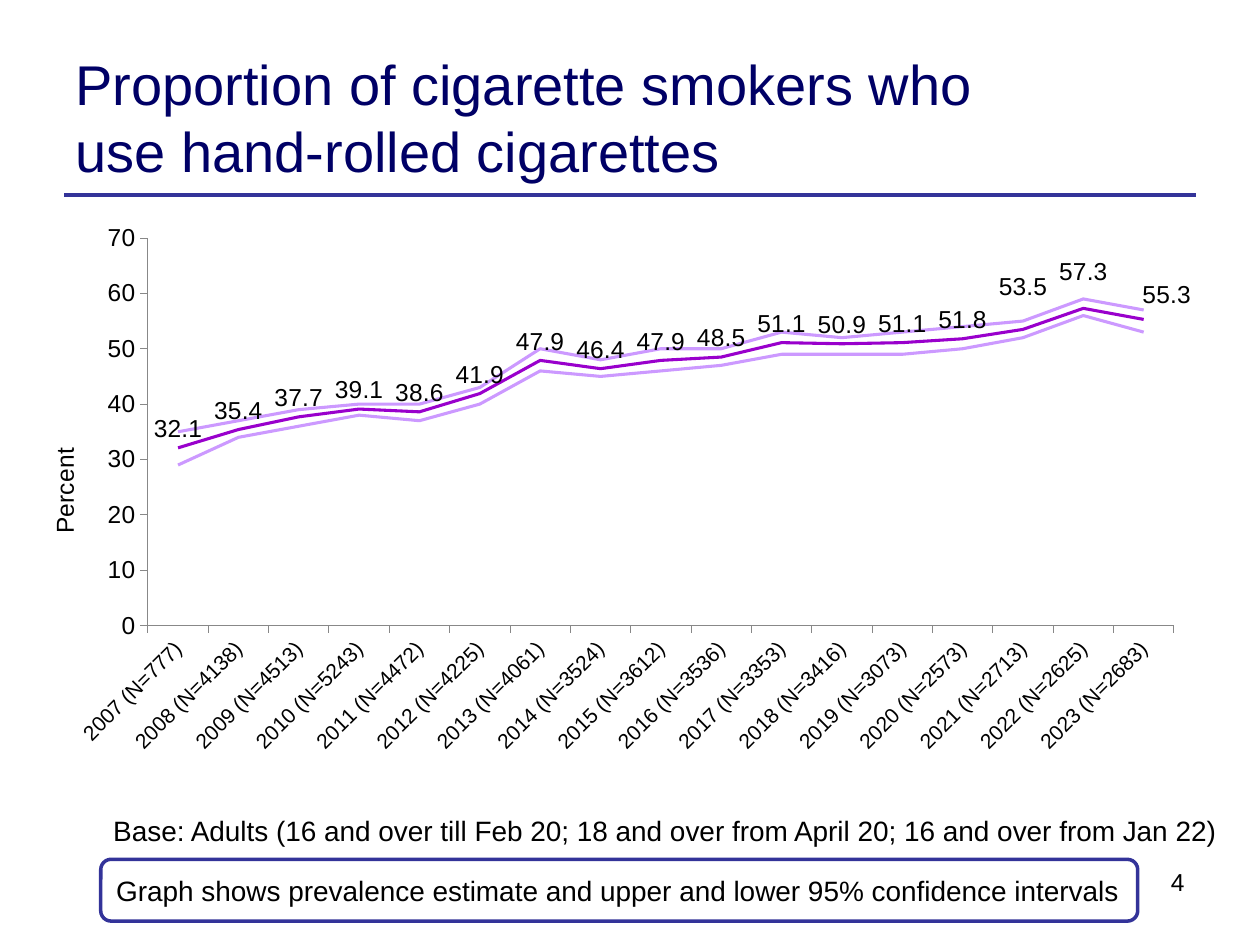
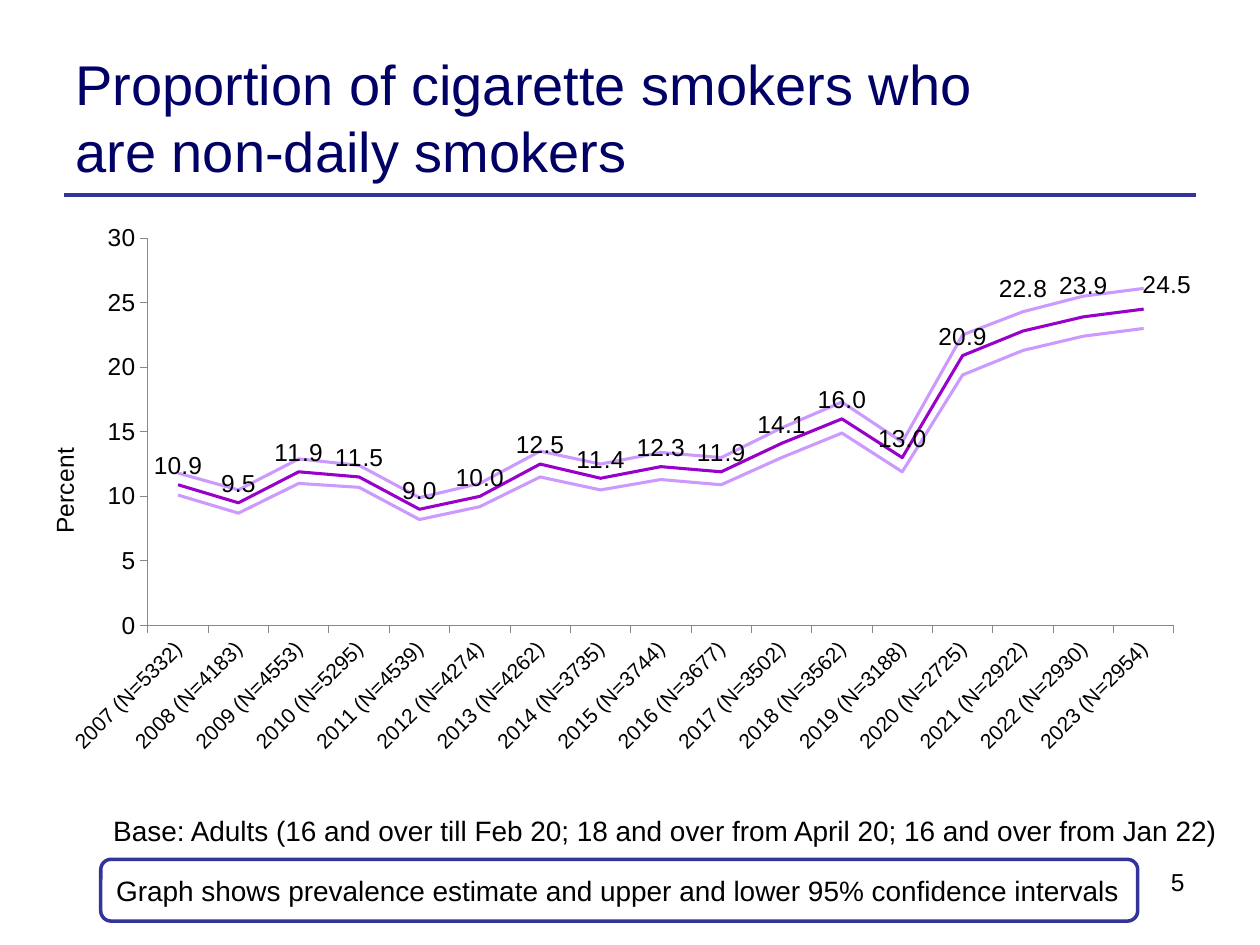
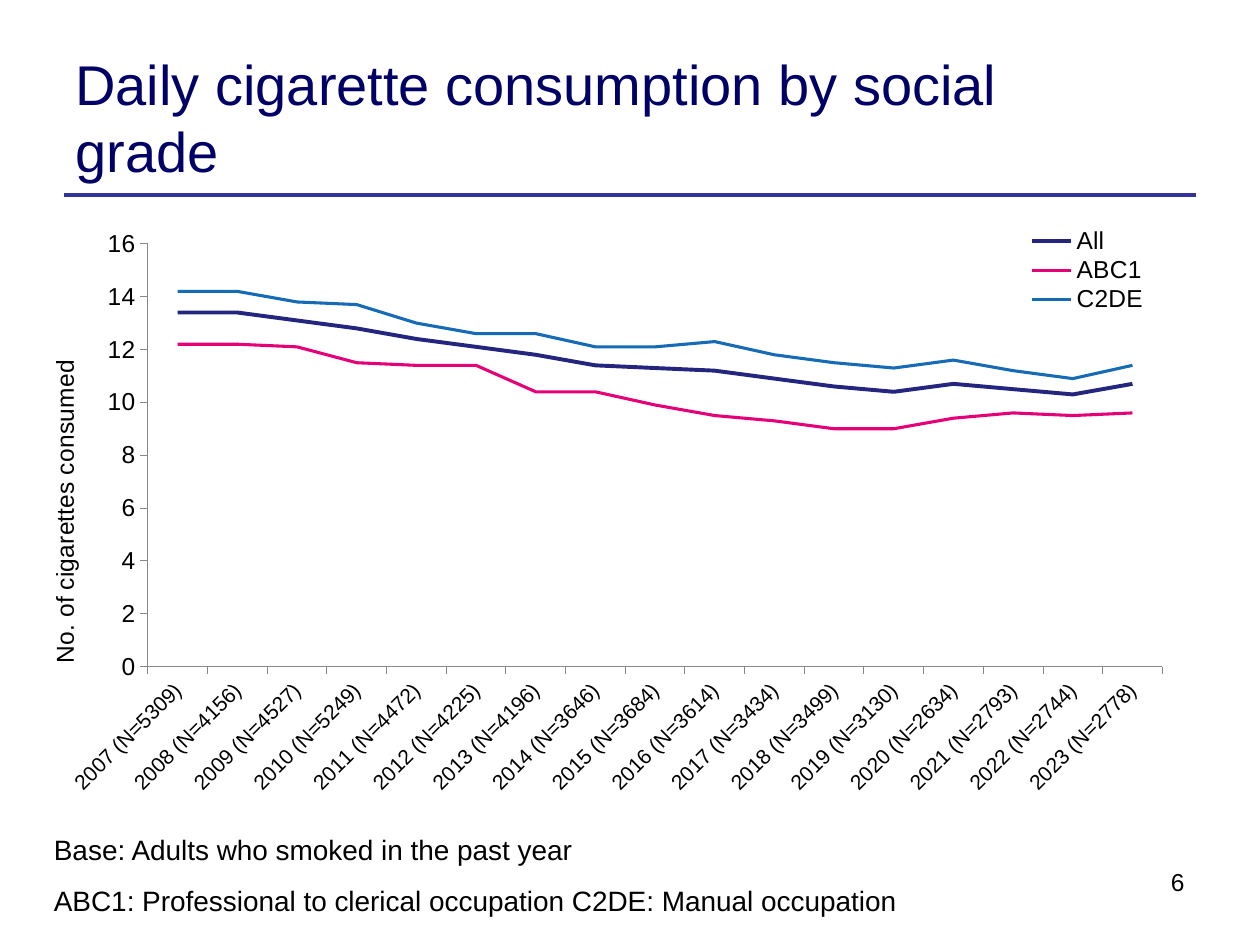
from lxml import etree
from pptx import Presentation
from pptx.chart.data import CategoryChartData
from pptx.dml.color import RGBColor
from pptx.enum.chart import XL_CHART_TYPE, XL_LABEL_POSITION, XL_LEGEND_POSITION, XL_TICK_MARK
from pptx.enum.shapes import MSO_CONNECTOR, MSO_SHAPE
from pptx.enum.text import MSO_ANCHOR, PP_ALIGN
from pptx.oxml.ns import qn
from pptx.util import Inches, Pt

FONT = "Arial"
COLORS = {
    "title": "000066", "rule": "333399", "text": "000000", "white": "FFFFFF",
    "axis": "888888", "estimate": "9900CC", "interval": "CC99FF",
    "all": "24257E", "abc1": "E50078", "c2de": "156BB5",
}
BASE_NOTE = "Base: Adults (16 and over till Feb 20; 18 and over from April 20; 16 and over from Jan 22)"
INTERVAL_NOTE = "Graph shows prevalence estimate and upper and lower 95% confidence intervals"
FIRST_YEAR = 2007

# Each series: name, colour key, line width in points, values from 2007 on.
# Label shifts: point index -> offset as a fraction of the chart size.
ROLLED = {
    "sizes": [777, 4138, 4513, 5243, 4472, 4225, 4061, 3524, 3612, 3536, 3353, 3416, 3073,
              2573, 2713, 2625, 2683],
    "series": [
        ("Series 1", "estimate", 1.75, [32.1, 35.4, 37.7, 39.1, 38.6, 41.9, 47.9, 46.4, 47.9,
                                        48.5, 51.1, 50.9, 51.1, 51.8, 53.5, 57.3, 55.3]),
        ("Series 2", "interval", 1.75, [29, 34, 36, 38, 37, 40, 46, 45, 46,
                                        47, 49, 49, 49, 50, 52, 56, 53]),
        ("Series 3", "interval", 1.75, [35, 37, 39, 40, 40, 43, 50, 48, 50,
                                        50, 53, 52, 53, 54, 55, 59, 57]),
    ],
    "top": 70, "step": 10,
    "label_shifts": {14: (0, -0.04), 15: (0, -0.03), 16: (0.02, -0.01)},
}
NON_DAILY = {
    "sizes": [5332, 4183, 4553, 5295, 4539, 4274, 4262, 3735, 3744, 3677, 3502, 3562, 3188,
              2725, 2922, 2930, 2954],
    "series": [
        ("Series 1", "estimate", 1.75, [10.9, 9.5, 11.9, 11.5, 9, 10, 12.5, 11.4, 12.3,
                                        11.9, 14.1, 16, 13, 20.9, 22.8, 23.9, 24.5]),
        ("Series 2", "interval", 1.75, [10.1, 8.7, 11, 10.7, 8.2, 9.2, 11.5, 10.5, 11.3,
                                        10.9, 13, 14.9, 11.9, 19.4, 21.3, 22.4, 23]),
        ("Series 3", "interval", 1.75, [11.8, 10.5, 12.9, 12.4, 9.9, 11, 13.5, 12.5, 13.4,
                                        13, 15.3, 17.3, 14.2, 22.5, 24.3, 25.5, 26.1]),
    ],
    "top": 30, "step": 5,
    "label_shifts": {14: (0, -0.04), 15: (0, -0.02), 16: (0.02, -0.01)},
}
CONSUMPTION = {
    "sizes": [5309, 4156, 4527, 5249, 4472, 4225, 4196, 3646, 3684, 3614, 3434, 3499, 3130,
              2634, 2793, 2744, 2778],
    "series": [
        ("All", "all", 2.25, [13.4, 13.4, 13.1, 12.8, 12.4, 12.1, 11.8, 11.4, 11.3,
                              11.2, 10.9, 10.6, 10.4, 10.7, 10.5, 10.3, 10.7]),
        ("ABC1", "abc1", 1.75, [12.2, 12.2, 12.1, 11.5, 11.4, 11.4, 10.4, 10.4, 9.9,
                                9.5, 9.3, 9, 9, 9.4, 9.6, 9.5, 9.6]),
        ("C2DE", "c2de", 1.75, [14.2, 14.2, 13.8, 13.7, 13, 12.6, 12.6, 12.1, 12.1,
                                12.3, 11.8, 11.5, 11.3, 11.6, 11.2, 10.9, 11.4]),
    ],
    "top": 16, "step": 2,
}


def rgb(key):
    return RGBColor.from_string(COLORS[key])


def box(left, top, width, height):
    return [Inches(v) for v in (left, top, width, height)]


def write(sp, text, size=16, color="text", align=PP_ALIGN.LEFT, anchor=MSO_ANCHOR.TOP):
    tf = sp.text_frame
    tf.word_wrap = True
    tf.vertical_anchor = anchor
    p = tf.paragraphs[0]
    p.alignment = align
    r = p.add_run()
    r.text = text
    r.font.name = FONT
    r.font.size = Pt(size)
    r.font.color.rgb = rgb(color)


def add_text(slide, place, text, **fmt):
    write(slide.shapes.add_textbox(*box(*place)), text, **fmt)


def add_rule(slide):
    line = slide.shapes.add_connector(
        MSO_CONNECTOR.STRAIGHT, Inches(0.51), Inches(1.55), Inches(9.49), Inches(1.55))
    line.line.color.rgb = rgb("rule")
    line.line.width = Pt(2.25)
    etree.SubElement(line._element.spPr, qn("a:effectLst"))


def add_frame(prs, title, number):
    """Add a slide with its title, rule and slide number."""
    slide = prs.slides.add_slide(prs.slide_layouts[6])
    add_rule(slide)
    add_text(slide, (0.5, 0.3, 7.89, 1.25), title, size=32, color="title",
             anchor=MSO_ANCHOR.MIDDLE)
    add_text(slide, (6.73, 6.83, 2.77, 0.52), str(number), size=14, align=PP_ALIGN.RIGHT)
    return slide


def add_interval_notes(slide):
    sp = slide.shapes.add_shape(MSO_SHAPE.ROUNDED_RECTANGLE, *box(0.8, 6.82, 8.23, 0.49))
    sp.shadow.inherit = False
    sp.fill.solid()
    sp.fill.fore_color.rgb = rgb("white")
    sp.line.color.rgb = rgb("rule")
    sp.line.width = Pt(2)
    write(sp, INTERVAL_NOTE, anchor=MSO_ANCHOR.MIDDLE)
    add_text(slide, (0.8, 6.41, 9.08, 0.37), BASE_NOTE)


def set_layout(element, index, **values):
    """Give a chart element a manual layout, as its child at index."""
    for old in element.findall(qn("c:layout")):
        element.remove(old)
    layout = etree.Element(qn("c:layout"))
    manual = etree.SubElement(layout, qn("c:manualLayout"))
    for name, value in values.items():
        etree.SubElement(manual, qn("c:" + name)).set("val", str(value))
    element.insert(index, layout)


def style_axis(axis, size):
    axis.has_major_gridlines = False
    axis.major_tick_mark = XL_TICK_MARK.OUTSIDE
    axis.minor_tick_mark = XL_TICK_MARK.NONE
    axis.format.line.color.rgb = rgb("axis")
    axis.format.line.width = Pt(0.5)
    axis.tick_labels.font.size = Pt(size)


def add_axis_title(axis, text, top):
    title = axis.axis_title
    tf = title.text_frame
    tf.text = text
    font = tf.paragraphs[0].runs[0].font
    font.name, font.size, font.bold = FONT, Pt(14), False
    body = tf._txBody.bodyPr
    body.set("rot", "-5400000")
    body.set("vert", "horz")
    set_layout(title._element, 1, xMode="edge", yMode="edge", x=0, y=top)


def label_points(series, shifts):
    """Show values above the line, with some labels shifted and no leader lines."""
    labels = series.data_labels
    labels.show_value = True
    labels.position = XL_LABEL_POSITION.ABOVE
    labels.number_format = "#,##0.0"
    labels.number_format_is_linked = False
    labels.font.size = Pt(14)
    for index in shifts:
        label = series.points[index].data_label
        label.font.size = Pt(14)
        label.position = XL_LABEL_POSITION.ABOVE
    for element, (x, y) in zip(series._element.xpath(".//c:dLbl"), shifts.values()):
        set_layout(element, 1, x=x, y=y)
    for leader in series._element.xpath(".//c:showLeaderLines"):
        leader.set("val", "0")


def add_legend(chart):
    chart.has_legend = True
    legend = chart.legend
    legend.position = XL_LEGEND_POSITION.RIGHT
    legend.include_in_layout = False
    legend.font.size = Pt(14)
    set_layout(legend._element, 1, xMode="edge", yMode="edge", x=0.84, y=0.01, w=0.13, h=0.15)


def add_line_chart(slide, content, axis_title, title_top, plot):
    data = CategoryChartData()
    data.categories = [f"{year} (N={n})" for year, n in enumerate(content["sizes"], FIRST_YEAR)]
    for name, _, _, values in content["series"]:
        data.add_series(name, values)
    chart = slide.shapes.add_chart(
        XL_CHART_TYPE.LINE, *box(0.35, 1.75, 9.15, 4.66), data).chart
    chart.has_title = False
    chart.has_legend = False
    chart.font.name = FONT
    chart.font.size = Pt(18)
    chart.font.color.rgb = rgb("text")
    chart.plots[0].vary_by_categories = False
    for series, (_, color, width, _) in zip(chart.plots[0].series, content["series"]):
        series.smooth = False
        series.format.line.color.rgb = rgb(color)
        series.format.line.width = Pt(width)

    style_axis(chart.category_axis, 12)
    chart.category_axis._element.txPr.bodyPr.set("rot", "-2700000")
    values = chart.value_axis
    style_axis(values, 14)
    values.minimum_scale = 0
    values.maximum_scale = content["top"]
    values.major_unit = content["step"]
    values.tick_labels.number_format = "0"
    values.tick_labels.number_format_is_linked = False
    add_axis_title(values, axis_title, title_top)

    set_layout(chart._chartSpace.chart.plotArea, 0, layoutTarget="inner", xMode="edge",
               yMode="edge", **dict(zip("xywh", plot)))
    return chart


def add_interval_slide(prs, title, number, content):
    slide = add_frame(prs, title, number)
    chart = add_line_chart(slide, content, "Percent", 0.38, (0.09, 0.03, 0.89, 0.66))
    label_points(chart.plots[0].series[0], content["label_shifts"])
    add_interval_notes(slide)


def add_consumption_slide(prs, title, number):
    slide = add_frame(prs, title, number)
    chart = add_line_chart(slide, CONSUMPTION, "No. of cigarettes consumed", 0.23,
                           (0.09, 0.04, 0.88, 0.72))
    add_legend(chart)
    add_text(slide, (0.33, 6.96, 6.97, 0.37),
             "ABC1: Professional to clerical occupation C2DE: Manual occupation")
    add_text(slide, (0.33, 6.56, 4.37, 0.37), "Base: Adults who smoked in the past year")


def main():
    prs = Presentation()
    prs.slide_width, prs.slide_height = Inches(10), Inches(7.5)
    add_interval_slide(
        prs, "Proportion of cigarette smokers who use hand-rolled cigarettes", 4, ROLLED)
    add_interval_slide(
        prs, "Proportion of cigarette smokers who are non-daily smokers", 5, NON_DAILY)
    add_consumption_slide(prs, "Daily cigarette consumption by social grade", 6)
    prs.save("out.pptx")


if __name__ == "__main__":
    main()
